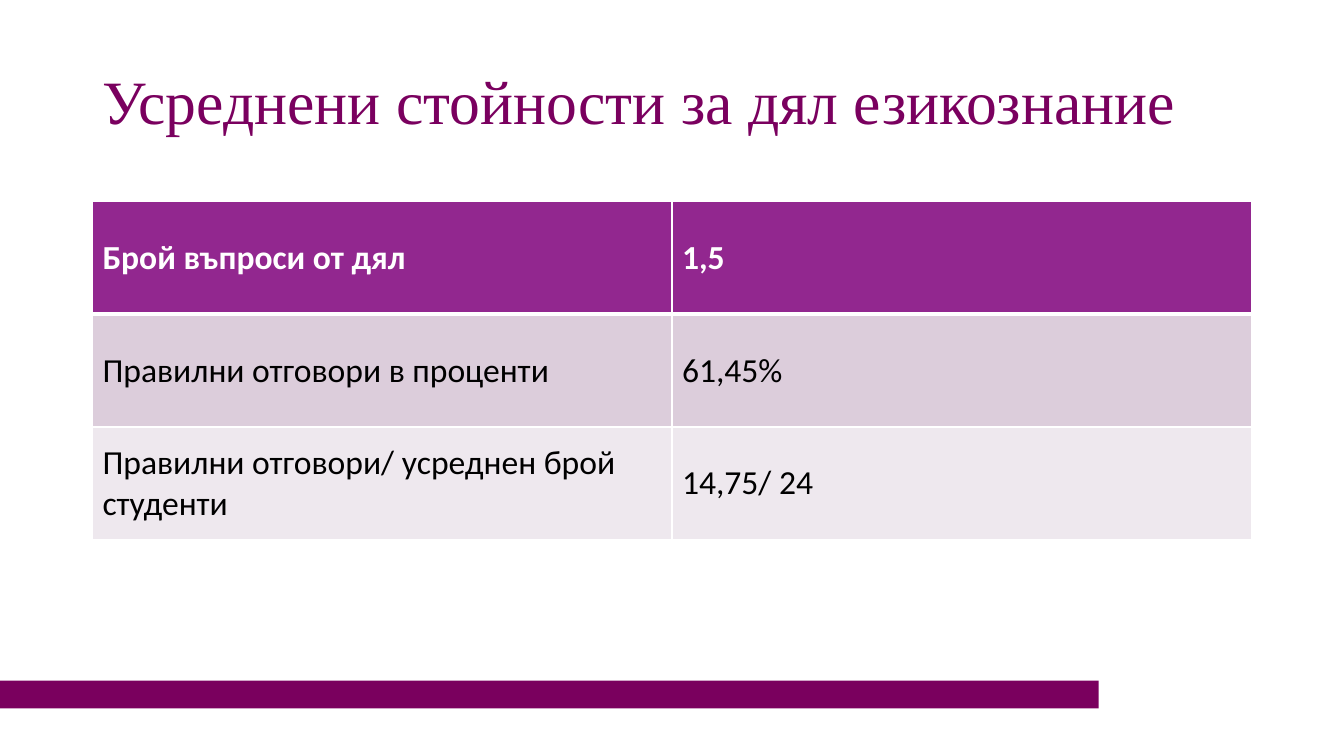
from lxml import etree
from pptx import Presentation
from pptx import util as u
from pptx.dml.color import RGBColor
from pptx.enum import shapes, text
from pptx.oxml import ns

PLUM = RGBColor(0x7A, 0x00, 0x5E)
TITLE_PLUM = RGBColor(0x7A, 0x00, 0x5F)
PURPLE = RGBColor(0x92, 0x27, 0x8F)
LILAC = RGBColor(0xDC, 0xCD, 0xDB)
PALE_LILAC = RGBColor(0xEE, 0xE8, 0xEE)
WHITE = RGBColor(0xFF, 0xFF, 0xFF)
BLACK = RGBColor(0x00, 0x00, 0x00)

ROWS = [
    ("Брой въпроси от дял", "1,5"),
    ("Правилни отговори в проценти", "61,45%"),
    ("Правилни отговори/ усреднен брой студенти", "14,75/ 24"),
]
ROW_FILLS = [PURPLE, LILAC, PALE_LILAC]


def write(frame, words, font, size, color, bold=False, line_spacing=None):
    para = frame.paragraphs[0]
    para.alignment = text.PP_ALIGN.LEFT
    if line_spacing:
        para.line_spacing = line_spacing
    span = para.add_run()
    span.text = words
    span.font.name = font
    span.font.size = u.Pt(size)
    span.font.bold = bold
    span.font.color.rgb = color


def set_borders(cell, color, widths):
    """Draw the left, right, top and bottom edges, widths in points."""
    properties = cell._tc.get_or_add_tcPr()
    for index, (side, width) in enumerate(zip("LRTB", widths)):
        line = etree.Element(ns.qn(f"a:ln{side}"), w=str(u.Pt(width)))
        fill = etree.SubElement(line, ns.qn("a:solidFill"))
        etree.SubElement(fill, ns.qn("a:srgbClr"), val=str(color))
        properties.insert(index, line)


class SlideBuilder:
    title_font = "Times New Roman"
    body_font = "Calibri"

    def __init__(self, slide):
        self.slide = slide

    def bar(self, left, top, width, height, color):
        bar = self.slide.shapes.add_shape(
            shapes.MSO_SHAPE.RECTANGLE, left, top, width, height)
        bar.shadow.inherit = False
        bar.fill.solid()
        bar.fill.fore_color.rgb = color
        bar.line.fill.background()

    def title(self, words, left, top, width, height):
        box = self.slide.shapes.add_textbox(left, top, width, height)
        frame = box.text_frame
        frame.word_wrap = True
        frame.vertical_anchor = text.MSO_ANCHOR.MIDDLE
        write(frame, words, self.title_font, 44, TITLE_PLUM, line_spacing=0.9)

    def table(self, rows, fills, left, top, width, height):
        table = self.slide.shapes.add_table(
            len(rows), len(rows[0]), left, top, width, height).table
        for row_index, (row, fill) in enumerate(zip(rows, fills)):
            header = row_index == 0
            top_width = 3 if row_index == 1 else 1
            bottom_width = 3 if header else 1
            for column_index, words in enumerate(row):
                cell = table.cell(row_index, column_index)
                cell.vertical_anchor = text.MSO_ANCHOR.MIDDLE
                cell.fill.solid()
                cell.fill.fore_color.rgb = fill
                set_borders(cell, WHITE, (1, 1, top_width, bottom_width))
                write(cell.text_frame, words, self.body_font, 24,
                      WHITE if header else BLACK, bold=header)


def main():
    deck = Presentation()
    deck.slide_width, deck.slide_height = u.Cm(33.87), u.Cm(19.05)
    page = SlideBuilder(deck.slides.add_slide(deck.slide_layouts[6]))

    # Footer bar
    page.bar(0, u.Cm(17.15), u.Cm(27.69), u.Cm(0.7), PLUM)

    # Title and table share the same left edge and width
    left, width = u.Cm(2.33), u.Cm(29.21)
    page.title("Усреднени стойности за дял езикознание",
               left, u.Cm(0.79), width, u.Cm(3.68))
    page.table(ROWS, ROW_FILLS, left, u.Cm(5.08), width, u.Cm(8.52))

    deck.save("out.pptx")


if __name__ == "__main__":
    main()
